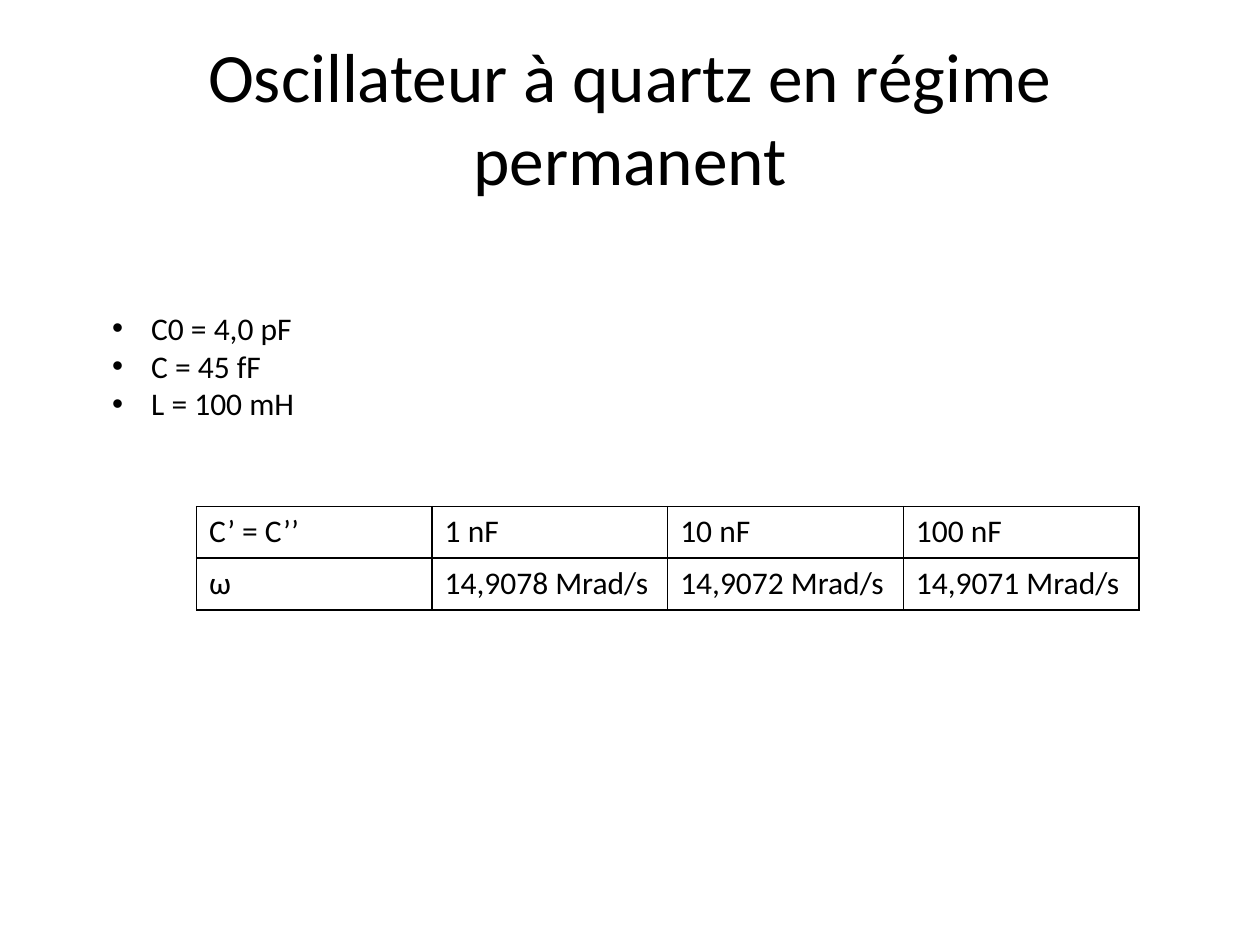
from lxml.etree import SubElement
from pptx import Presentation
from pptx.dml.color import RGBColor
from pptx.enum.text import MSO_ANCHOR, MSO_AUTO_SIZE, PP_ALIGN
from pptx.oxml.ns import qn
from pptx.util import Inches, Pt

TITLE = "Oscillateur à quartz en régime permanent"
COMPONENTS = ["C0 = 4,0 pF", "C = 45 fF", "L = 100 mH"]
PULSATIONS = [
    ["C’ = C’’", "1 nF", "10 nF", "100 nF"],
    ["ω", "14,9078 Mrad/s", "14,9072 Mrad/s", "14,9071 Mrad/s"],
]
THEME = {"font": "Calibri", "ink": "000000", "title": 39.6, "text": 18, "border": 1}
TITLE_BOX = (0.5, 0.3, 9, 1.25)
LIST_BOX = (0.79, 2.4, 4.43, 1.01)
TABLE_AT = (1.56, 4.02)
COL_W, ROW_H = 1.87, 0.41
BULLET_INDENT = 0.31


def place(sp, box):
    sp.left, sp.top, sp.width, sp.height = map(Inches, box)


def add_bullet(p):
    pPr = p._p.get_or_add_pPr()
    pPr.set("marL", str(Inches(BULLET_INDENT)))
    pPr.set("indent", str(-Inches(BULLET_INDENT)))
    SubElement(pPr, qn("a:buFont"), typeface="Arial")
    SubElement(pPr, qn("a:buChar"), char="•")


def write(tf, lines, size=THEME["text"], align=PP_ALIGN.LEFT,
          anchor=MSO_ANCHOR.TOP, bullets=False):
    tf.word_wrap = True
    tf.vertical_anchor = anchor
    for i, line in enumerate(lines):
        p = tf.add_paragraph() if i else tf.paragraphs[0]
        if bullets:
            add_bullet(p)
        p.alignment = align
        p.space_before = Pt(0)
        r = p.add_run()
        r.text = line
        r.font.name = THEME["font"]
        r.font.size = Pt(size)
        r.font.color.rgb = RGBColor.from_string(THEME["ink"])


def add_borders(cell):
    tcPr = cell._tc.get_or_add_tcPr()
    for side in ("lnL", "lnR", "lnT", "lnB"):
        ln = SubElement(tcPr, qn(f"a:{side}"), w=str(Pt(THEME["border"])))
        SubElement(SubElement(ln, qn("a:solidFill")), qn("a:srgbClr"), val=THEME["ink"])


def add_grid(s, rows):
    n_rows, n_cols = len(rows), len(rows[0])
    size = (COL_W * n_cols, ROW_H * n_rows)
    table = s.shapes.add_table(n_rows, n_cols, *map(Inches, TABLE_AT + size)).table
    table.first_row = table.horz_banding = False
    for i, row in enumerate(rows):
        for j, text in enumerate(row):
            cell = table.cell(i, j)
            add_borders(cell)
            cell.fill.background()
            write(cell.text_frame, [text])


def main():
    prs = Presentation()
    prs.slide_width, prs.slide_height = Inches(10), Inches(7.5)
    s = prs.slides.add_slide(prs.slide_layouts[1])
    title, body = s.shapes.title, s.placeholders[1]
    place(title, TITLE_BOX)
    write(title.text_frame, [TITLE], size=THEME["title"],
          align=PP_ALIGN.CENTER, anchor=MSO_ANCHOR.MIDDLE)
    place(body, LIST_BOX)
    write(body.text_frame, COMPONENTS, bullets=True)
    for sp in (title, body):
        sp.text_frame.auto_size = MSO_AUTO_SIZE.NONE
    add_grid(s, PULSATIONS)
    prs.save("out.pptx")


if __name__ == "__main__":
    main()
